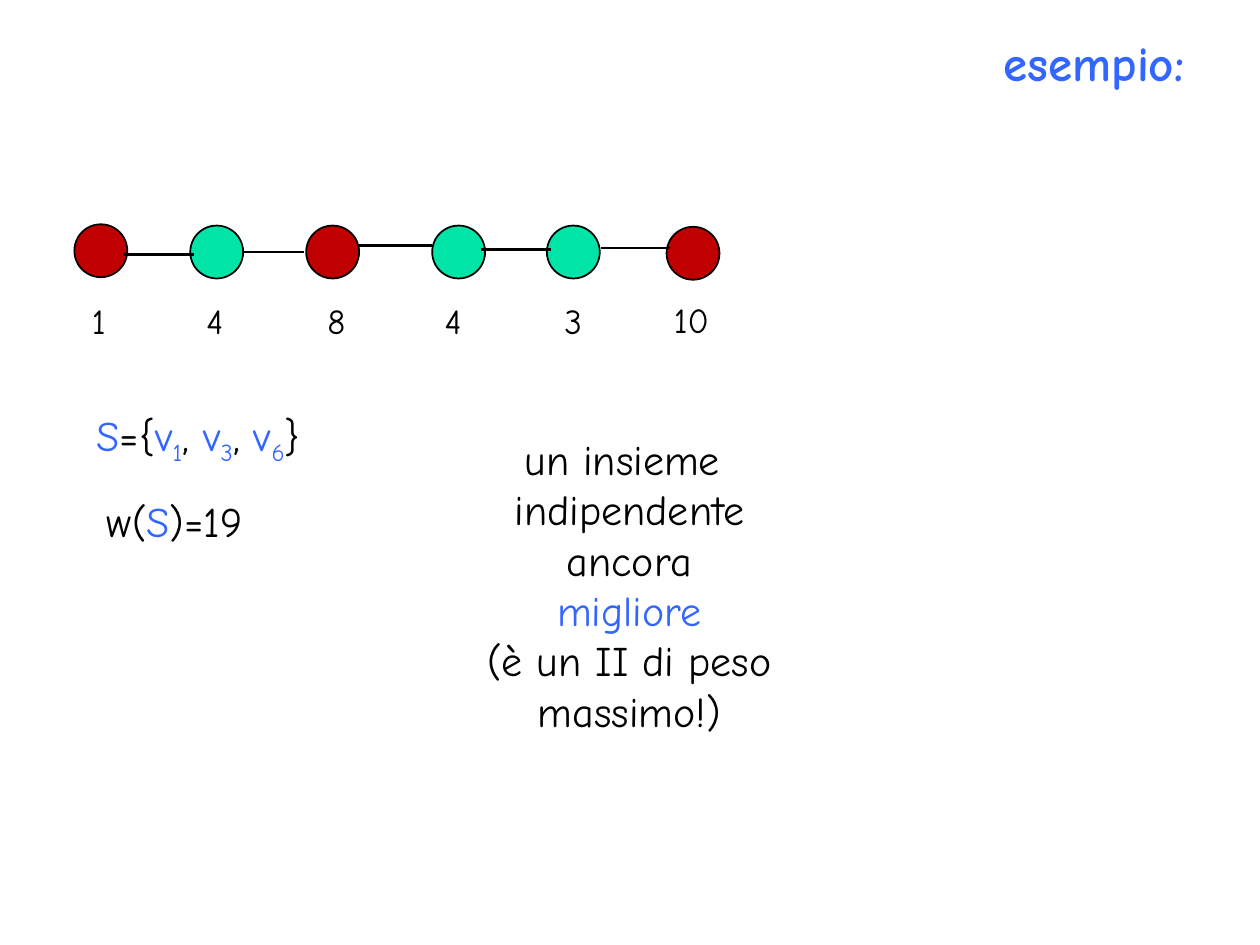
from lxml import etree
from pptx import Presentation
from pptx.dml.color import RGBColor
from pptx.enum.shapes import MSO_CONNECTOR, MSO_SHAPE
from pptx.enum.text import MSO_ANCHOR, PP_ALIGN
from pptx.oxml.ns import qn
from pptx.util import Inches, Pt

STRAIGHT = MSO_CONNECTOR.STRAIGHT
OVAL = MSO_SHAPE.OVAL
TOP = MSO_ANCHOR.TOP
LEFT, CENTER, RIGHT = PP_ALIGN.LEFT, PP_ALIGN.CENTER, PP_ALIGN.RIGHT

FONT = "Comic Neue"
BLACK, BLUE, RED, GREEN = "000000", "3366FF", "C00000", "00E4A8"
DIAMETER = 0.42

NODES = [
    (0.59, 1.78, RED),
    (1.51, 1.79, GREEN),
    (2.43, 1.79, RED),
    (3.43, 1.79, GREEN),
    (4.34, 1.79, GREEN),
    (5.29, 1.8, RED),
]
EDGES = [
    (0.98, 1.54, 2.02),
    (1.94, 2.41, 2),
    (2.84, 3.43, 1.95),
    (3.82, 4.37, 1.98),
    (4.77, 5.32, 1.97),
]
WEIGHTS = [
    ("1", 0.63, 2.33, 0.31),
    ("4", 1.54, 2.33, 0.31),
    ("8", 2.5, 2.33, 0.31),
    ("4", 3.43, 2.33, 0.31),
    ("3", 4.38, 2.33, 0.31),
    ("10", 5.25, 2.32, 0.69),
]


def color(value):
    return RGBColor.from_string(value)


def add_span(para, text, size=24, fill=BLACK, bold=False, subscript=False):
    span = para.add_run()
    span.text = text
    span.font.name = FONT
    span.font.size = Pt(size)
    span.font.bold = bold
    span.font.color.rgb = color(fill)
    if subscript:
        span.font._element.set("baseline", "-25000")


def add_box(page, left, top, width, height, lines, size=24, align=LEFT):
    box = page.shapes.add_textbox(Inches(left), Inches(top), Inches(width), Inches(height))
    frame = box.text_frame
    frame.word_wrap = True
    for index, line in enumerate(lines):
        para = frame.add_paragraph() if index else frame.paragraphs[0]
        para.alignment = align
        for text, style in line:
            add_span(para, text, size=size, **style)


def add_node(page, left, top, fill):
    node = page.shapes.add_shape(
        OVAL, Inches(left), Inches(top), Inches(DIAMETER), Inches(DIAMETER)
    )
    node.shadow.inherit = False
    node.fill.solid()
    node.fill.fore_color.rgb = color(fill)
    node.line.color.rgb = color(BLACK)
    node.line.width = Pt(1)


def add_edge(page, start, end, height):
    edge = page.shapes.add_connector(
        STRAIGHT, Inches(start), Inches(height), Inches(end), Inches(height)
    )
    edge.line.color.rgb = color(BLACK)
    edge.line.width = Pt(1.5)
    etree.SubElement(edge._element.spPr, qn("a:effectLst"))


def set_title(page, text):
    title = page.shapes.title
    title.left, title.top = Inches(0.5), Inches(0.21)
    title.width, title.height = Inches(9), Inches(1)
    title.text_frame.vertical_anchor = TOP
    para = title.text_frame.paragraphs[0]
    para.alignment = RIGHT
    para.space_before = Pt(5.6)
    add_span(para, text, size=28, fill=BLUE, bold=True)


def main():
    deck = Presentation()
    deck.slide_width, deck.slide_height = Inches(10), Inches(7.5)
    page = deck.slides.add_slide(deck.slide_layouts[5])
    set_title(page, "esempio:")

    for node in NODES:
        add_node(page, *node)
    for edge in EDGES:
        add_edge(page, *edge)
    for text, left, top, width in WEIGHTS:
        add_box(page, left, top, width, 0.44, [[(text, {})]], size=20)

    plain, accent = {}, {"fill": BLUE}
    lower = {"fill": BLUE, "subscript": True}
    chosen_set = [
        ("S", accent), ("={", plain),
        ("v", accent), ("1", lower), (",", plain),
        (" v", accent), ("3", lower), (", ", plain),
        ("v", accent), ("6", lower), ("}", plain),
    ]
    total_weight = [("w(", plain), ("S", accent), (")=19", plain)]
    remark = [
        [("un insieme ", plain)],
        [("indipendente", plain)],
        [("ancora", plain)],
        [("migliore", accent)],
        [("(è un II di peso massimo!)", plain)],
    ]
    add_box(page, 0.67, 3.2, 3.62, 0.5, [chosen_set])
    add_box(page, 0.75, 3.88, 3.62, 0.5, [total_weight])
    add_box(page, 3.58, 3.39, 2.83, 2.52, remark, align=CENTER)

    deck.save("out.pptx")


if __name__ == "__main__":
    main()
